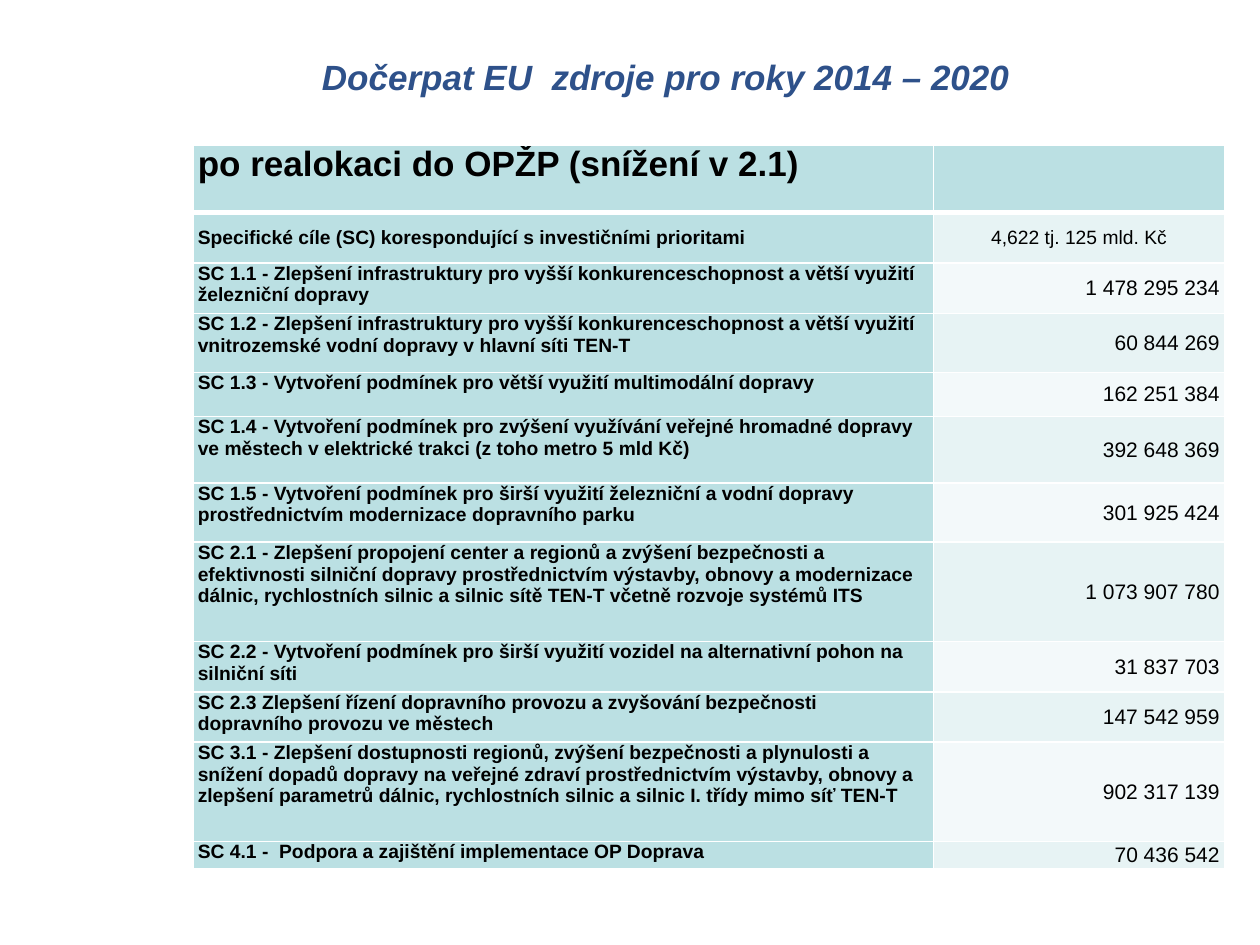
from lxml.etree import SubElement
from pptx import Presentation
from pptx.dml.color import RGBColor
from pptx.enum.text import MSO_ANCHOR, PP_ALIGN
from pptx.oxml.ns import qn
from pptx.util import Inches, Pt

BLACK = RGBColor(0x00, 0x00, 0x00)
WHITE = RGBColor(0xFF, 0xFF, 0xFF)
NAVY = RGBColor(0x2E, 0x51, 0x8A)
TEAL = RGBColor(0xBB, 0xE0, 0xE3)
BAND_COLORS = (RGBColor(0xF3, 0xF9, 0xFA), RGBColor(0xE7, 0xF3, 0xF4))

TITLE_BOX = (Inches(1.54), Inches(0.21), Inches(7.49), Inches(0.79))
TABLE_BOX = (Inches(1.53), Inches(1.15), Inches(8.19), Inches(5.75))
LABEL_SHARE = 0.718
ROW_HEIGHTS = (0.54, 0.4, 0.4, 0.47, 0.35, 0.53, 0.47, 0.79, 0.4, 0.4, 0.79, 0.22)

HEADER = "po realokaci do OPŽP (snížení v 2.1)"
SUBHEADER = ("Specifické cíle (SC) korespondující s investičními prioritami", "4,622 tj. 125 mld. Kč")
GOALS = (
    ("SC 1.1 - Zlepšení infrastruktury pro vyšší konkurenceschopnost a větší využití "
     "železniční dopravy", "1 478 295 234"),
    ("SC 1.2 - Zlepšení infrastruktury pro vyšší konkurenceschopnost a větší využití "
     "vnitrozemské vodní dopravy v hlavní síti TEN-T", "60 844 269"),
    ("SC 1.3 - Vytvoření podmínek pro větší využití multimodální dopravy", "162 251 384"),
    ("SC 1.4 - Vytvoření podmínek pro zvýšení využívání veřejné hromadné dopravy "
     "ve městech v elektrické trakci (z toho metro 5 mld Kč)", "392 648 369"),
    ("SC 1.5 - Vytvoření podmínek pro širší využití železniční a vodní dopravy "
     "prostřednictvím modernizace dopravního parku", "301 925 424"),
    ("SC 2.1 - Zlepšení propojení center a regionů a zvýšení bezpečnosti a efektivnosti "
     "silniční dopravy prostřednictvím výstavby, obnovy a modernizace dálnic, rychlostních "
     "silnic a silnic sítě TEN-T včetně rozvoje systémů ITS", "1 073 907 780"),
    ("SC 2.2 - Vytvoření podmínek pro širší využití vozidel na alternativní pohon "
     "na silniční síti", "31 837 703"),
    ("SC 2.3 Zlepšení řízení dopravního provozu a zvyšování bezpečnosti dopravního "
     "provozu ve městech", "147 542 959"),
    ("SC 3.1 - Zlepšení dostupnosti regionů, zvýšení bezpečnosti a plynulosti a snížení "
     "dopadů dopravy na veřejné zdraví prostřednictvím výstavby, obnovy a zlepšení parametrů "
     "dálnic, rychlostních silnic a silnic I. třídy mimo síť TEN-T", "902 317 139"),
    ("SC 4.1 -  Podpora a zajištění implementace OP Doprava", "70 436 542"),
)


def write_text(text_frame, text, size=11, color=BLACK, bold=False, italic=False,
               align=PP_ALIGN.LEFT):
    paragraph = text_frame.paragraphs[0]
    paragraph.alignment = align
    run = paragraph.add_run()
    run.text = text
    run.font.name = "Arial"
    run.font.size = Pt(size)
    run.font.bold = bold
    run.font.italic = italic
    run.font.color.rgb = color


def format_cell(cell, fill, anchor=MSO_ANCHOR.TOP, top=1, bottom=1):
    cell.margin_left = cell.margin_right = Inches(0.04)
    cell.margin_top = cell.margin_bottom = 0
    cell.vertical_anchor = anchor
    properties = cell._tc.get_or_add_tcPr()
    for side, width in (("L", 1), ("R", 1), ("T", top), ("B", bottom)):
        line = SubElement(properties, qn(f"a:ln{side}"), w=str(Pt(width)))
        line_fill = SubElement(line, qn("a:solidFill"))
        SubElement(line_fill, qn("a:srgbClr"), val=str(WHITE))
    cell.fill.solid()
    cell.fill.fore_color.rgb = fill


def add_title(slide, box):
    title = slide.shapes.title
    title.left, title.top, title.width, title.height = box
    title.text_frame.vertical_anchor = MSO_ANCHOR.MIDDLE
    write_text(title.text_frame, "Dočerpat EU  zdroje pro roky 2014 – 2020", size=20,
               color=NAVY, bold=True, italic=True, align=PP_ALIGN.CENTER)


def add_goal_table(slide, box):
    width, height = box[2:]
    table = slide.shapes.add_table(len(ROW_HEIGHTS), 2, *box).table
    table.columns[0].width = int(width * LABEL_SHARE)
    table.columns[1].width = width - table.columns[0].width
    for row, row_height in zip(table.rows, ROW_HEIGHTS):
        row.height = int(height * row_height / sum(ROW_HEIGHTS))

    for cell in table.rows[0].cells:
        format_cell(cell, TEAL, bottom=3)
    write_text(table.cell(0, 0).text_frame, HEADER, size=20, bold=True)

    for index, (label, value) in enumerate((SUBHEADER, *GOALS), start=1):
        is_subheader = index == 1
        top = 3 if is_subheader else 1
        label_cell, value_cell = table.rows[index].cells
        format_cell(label_cell, TEAL, top=top,
                    anchor=MSO_ANCHOR.MIDDLE if is_subheader else MSO_ANCHOR.TOP)
        write_text(label_cell.text_frame, label, bold=True)
        format_cell(value_cell, BAND_COLORS[index % 2], anchor=MSO_ANCHOR.MIDDLE, top=top)
        write_text(value_cell.text_frame, value, size=11 if is_subheader else 12,
                   align=PP_ALIGN.CENTER if is_subheader else PP_ALIGN.RIGHT)


def main():
    presentation = Presentation()
    presentation.slide_width = Inches(10)
    presentation.slide_height = Inches(7.5)
    slide = presentation.slides.add_slide(presentation.slide_layouts[5])
    add_title(slide, TITLE_BOX)
    add_goal_table(slide, TABLE_BOX)
    presentation.save("out.pptx")


if __name__ == "__main__":
    main()
